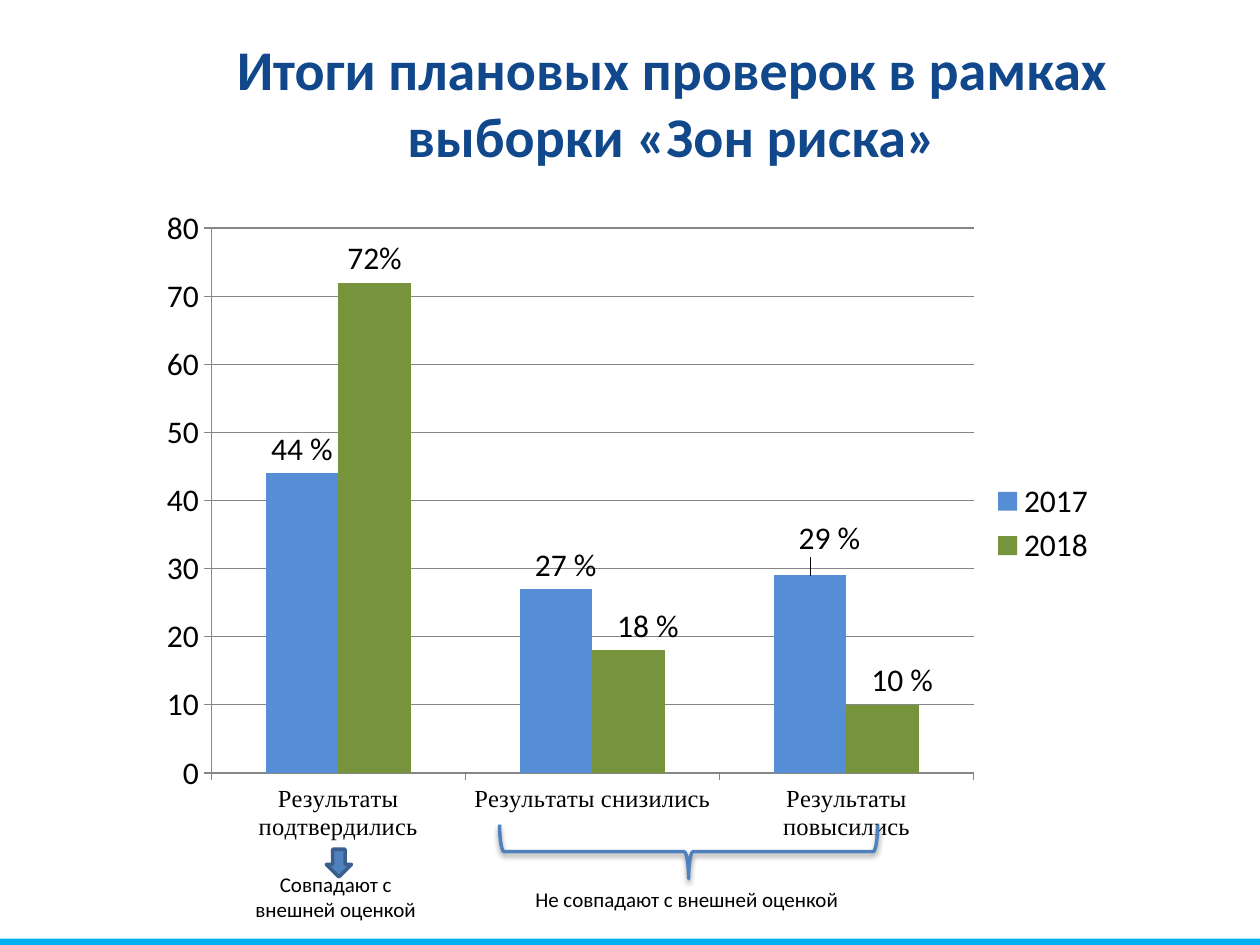
from lxml import etree
from pptx import Presentation
from pptx.chart.data import CategoryChartData
from pptx.dml.color import RGBColor
from pptx.enum import chart as charts, shapes, text
from pptx.oxml import parse_xml
from pptx.oxml.ns import nsdecls, qn
from pptx.util import Inches, Pt

BLACK = RGBColor(0x00, 0x00, 0x00)
NAVY = RGBColor(0x11, 0x47, 0x8B)
CYAN = RGBColor(0x00, 0xB0, 0xF0)
BLUE = RGBColor(0x4F, 0x81, 0xBD)
DARK_BLUE = RGBColor(0x3A, 0x5F, 0x8C)
BAR_BLUE = RGBColor(0x55, 0x8E, 0xD5)
BAR_GREEN = RGBColor(0x77, 0x93, 0x3C)
GRAY = RGBColor(0x86, 0x86, 0x86)

TITLE = "Итоги плановых проверок в рамках выборки «Зон риска»"
CATEGORIES = ["Результаты подтвердились", "Результаты снизились", "Результаты повысились"]
# Each point: value, label, label shift as a share of the chart's width and height
SERIES = [
    ("2017", BAR_BLUE, [(44, "44 %", (0, 0)), (27, "27 %", (0.01, 0)), (29, "29 %", (0.02, -0.02))]),
    ("2018", BAR_GREEN, [(72, "72%", (0, 0)), (18, "18 %", (0.02, 0)), (10, "10 %", (0.02, 0))]),
]
NOTES = [
    ("Не совпадают с внешней оценкой", (4.15, 6.99, 2.83, 0.3), text.PP_ALIGN.LEFT),
    ("Совпадают с внешней оценкой", (1.88, 6.87, 1.57, 0.5), text.PP_ALIGN.CENTER),
]
PLOT_AREA = {"x": 0.07, "y": 0.05, "w": 0.79, "h": 0.83}


def place(box):
    return [Inches(length) for length in box]


def style_font(font, size, name="Calibri", color=BLACK, bold=False):
    font.size, font.name, font.bold = Pt(size), name, bold
    font.color.rgb = color


def add_text(slide, content, box, size=12, color=BLACK, bold=False,
             align=text.PP_ALIGN.LEFT, anchor=text.MSO_ANCHOR.TOP, insets=(0.1, 0.05)):
    frame = slide.shapes.add_textbox(*place(box)).text_frame
    frame.word_wrap = True
    frame.vertical_anchor = anchor
    frame.margin_left = frame.margin_right = Inches(insets[0])
    frame.margin_top = frame.margin_bottom = Inches(insets[1])
    paragraph = frame.paragraphs[0]
    paragraph.alignment = align
    run = paragraph.add_run()
    run.text = content
    style_font(run.font, size, color=color, bold=bold)


def add_shape(slide, kind, box, fill=None, line=None):
    shape = slide.shapes.add_shape(kind, *place(box))
    shape.shadow.inherit = False
    if fill is None:
        shape.fill.background()
    else:
        shape.fill.solid()
        shape.fill.fore_color.rgb = fill
    if line is None:
        shape.line.fill.background()
    else:
        shape.line.color.rgb = line
        shape.line.width = Pt(2)
    return shape


def add_shadow(shape):
    effects = shape._element.spPr.find(qn("a:effectLst"))
    effects.append(parse_xml(
        f'<a:outerShdw {nsdecls("a")} blurRad="{Pt(3.1)}" dist="{Pt(1.6)}" dir="5400000" rotWithShape="0">'
        '<a:srgbClr val="000000"><a:alpha val="38000"/></a:srgbClr></a:outerShdw>'))


def manual_layout(values, inner=False):
    layout = etree.Element(qn("c:layout"))
    manual = etree.SubElement(layout, qn("c:manualLayout"))
    settings = {}
    if inner:
        settings = {"layoutTarget": "inner", "xMode": "edge", "yMode": "edge"}
    for tag, value in {**settings, **values}.items():
        etree.SubElement(manual, qn(f"c:{tag}")).set("val", str(value))
    return layout


def add_results_chart(slide, box):
    data = CategoryChartData()
    data.categories = CATEGORIES
    for name, _, points in SERIES:
        data.add_series(name, [value for value, _, _ in points])
    chart = slide.shapes.add_chart(charts.XL_CHART_TYPE.COLUMN_CLUSTERED, *place(box), data).chart
    chart.has_title = False
    style_font(chart.font, 18)
    chart.has_legend = True
    chart.legend.position = charts.XL_LEGEND_POSITION.RIGHT
    chart.legend.include_in_layout = False

    for axis in (chart.category_axis, chart.value_axis):
        axis.major_tick_mark = charts.XL_TICK_MARK.OUTSIDE
        axis.format.line.color.rgb = GRAY
    style_font(chart.category_axis.tick_labels.font, 14, name="Times New Roman")
    value_axis = chart.value_axis
    value_axis.minimum_scale, value_axis.maximum_scale, value_axis.major_unit = 0, 80, 10
    value_axis.major_gridlines.format.line.color.rgb = GRAY

    plot = chart.plots[0]
    plot.gap_width, plot.overlap, plot.vary_by_categories = 150, 0, False
    for series, (_, color, points) in zip(plot.series, SERIES):
        series.format.fill.solid()
        series.format.fill.fore_color.rgb = color
        series.data_labels.show_value = True
        for index, (_, label, _) in enumerate(points):
            data_label = series.points[index].data_label
            run = data_label.text_frame.paragraphs[0].add_run()
            run.text = label
            style_font(run.font, 18)
            data_label.position = charts.XL_LABEL_POSITION.OUTSIDE_END
        for element, (_, _, (x, y)) in zip(series._element.iter(qn("c:dLbl")), points):
            if x or y:
                element.find(qn("c:idx")).addnext(manual_layout({"x": x, "y": y}))

    plot_area = chart._chartSpace.chart.plotArea
    for layout in plot_area.findall(qn("c:layout")):
        plot_area.remove(layout)
    plot_area.insert(0, manual_layout(PLOT_AREA, inner=True))


def main():
    presentation = Presentation()
    presentation.slide_width, presentation.slide_height = Inches(10), Inches(7.5)
    slide = presentation.slides.add_slide(presentation.slide_layouts[6])

    add_shape(slide, shapes.MSO_SHAPE.RECTANGLE, (0, 7.45, 10, 0.05), fill=CYAN)
    add_text(slide, TITLE, (1.79, 0.28, 7.09, 1.05), size=32, color=NAVY, bold=True,
             align=text.PP_ALIGN.CENTER, anchor=text.MSO_ANCHOR.MIDDLE, insets=(0.07, 0.04))
    add_results_chart(slide, (1.14, 1.55, 7.66, 5.21))

    brace = add_shape(slide, shapes.MSO_SHAPE.RIGHT_BRACE, (5.25, 5.26, 0.43, 3), line=BLUE)
    brace.rotation = 90
    add_shadow(brace)
    for content, box, align in NOTES:
        add_text(slide, content, box, align=align)
    add_shape(slide, shapes.MSO_SHAPE.DOWN_ARROW, (2.59, 6.74, 0.2, 0.22), fill=BLUE, line=DARK_BLUE)

    presentation.save("out.pptx")


if __name__ == "__main__":
    main()
